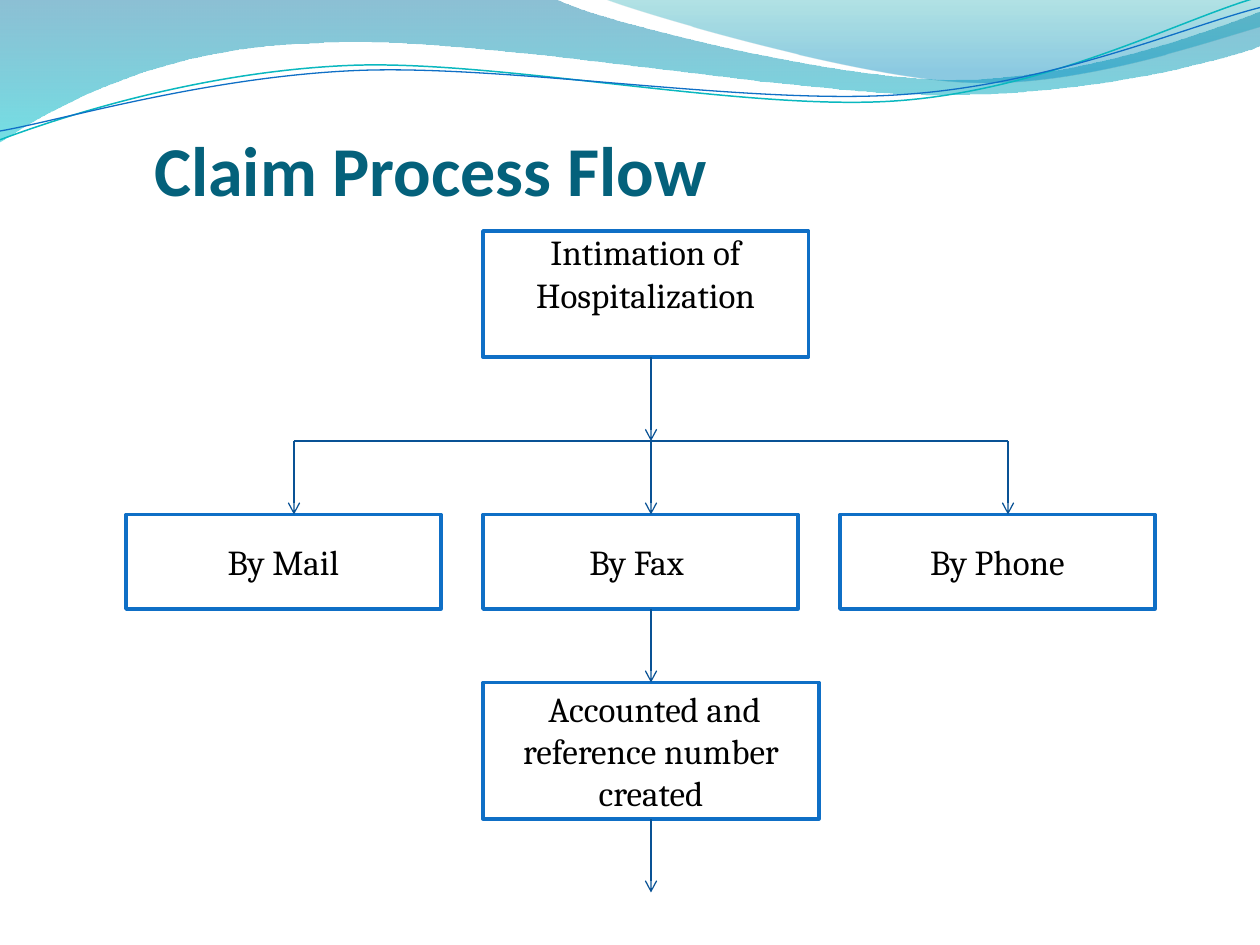
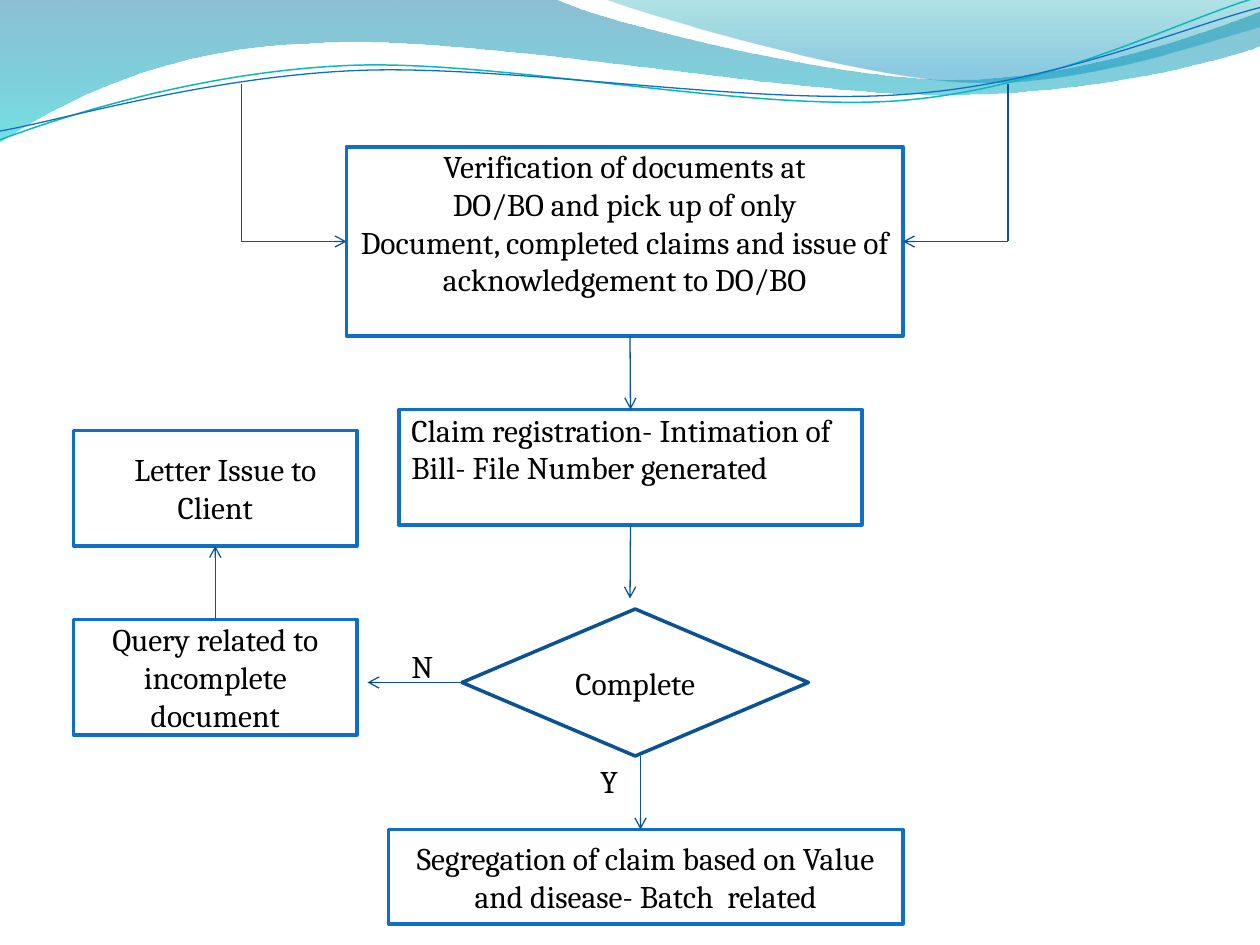
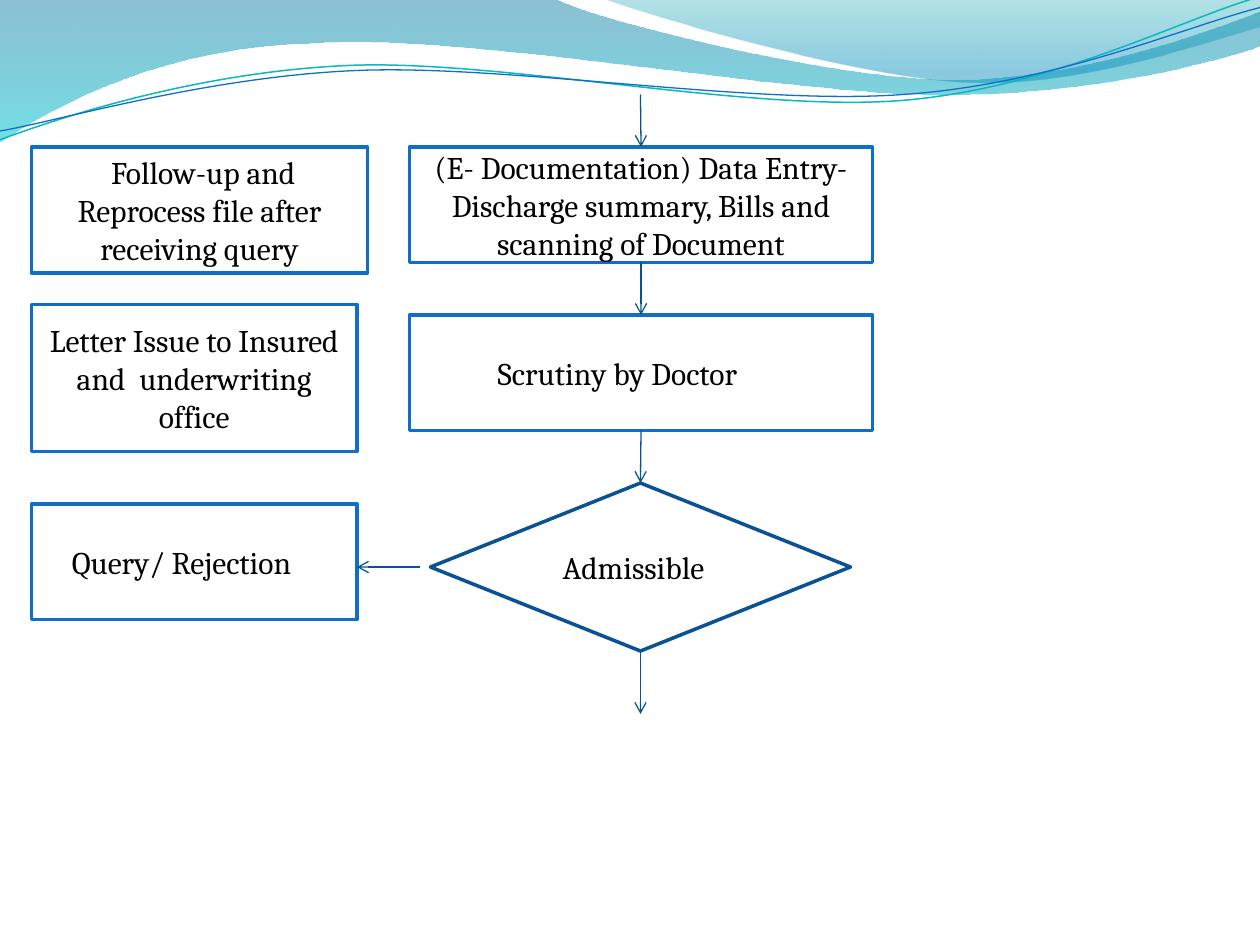
"""Build a three-slide claim process flowchart under a wave banner."""
from lxml.etree import SubElement
from pptx import Presentation
from pptx.dml.color import RGBColor
from pptx.enum.shapes import MSO_CONNECTOR, MSO_SHAPE
from pptx.enum.text import MSO_ANCHOR, PP_ALIGN
from pptx.oxml.ns import qn
from pptx.util import Inches, Pt

WHITE = RGBColor(0xFF, 0xFF, 0xFF)
BLACK = RGBColor(0x00, 0x00, 0x00)
TITLE = RGBColor(0x04, 0x61, 0x7B)
BLUE = RGBColor(0x0F, 0x6F, 0xC6)
NAVY = RGBColor(0x0B, 0x52, 0x92)
ARROW = RGBColor(0x09, 0x52, 0x95)
AQUA = RGBColor(0x0A, 0xB8, 0xBF)
OCEAN = RGBColor(0x00, 0x74, 0xA1)
TURQUOISE = RGBColor(0x00, 0xC6, 0xCF)
TEAL = RGBColor(0x00, 0xA1, 0xA9)
AZURE = RGBColor(0x00, 0x8B, 0xBF)

COLUMNS, ROWS = 120, 90
CELL = Inches(10) // COLUMNS
WIDE = 44.1
RECT, DECISION = MSO_SHAPE.RECTANGLE, MSO_SHAPE.FLOWCHART_DECISION
TOP, LEFT, BOTTOM, RIGHT = range(4)

deck = Presentation()
deck.slide_width, deck.slide_height = COLUMNS * CELL, ROWS * CELL
pages = [deck.slides.add_slide(deck.slide_layouts[6]) for _ in range(3)]
intake, checking, scrutiny = pages


def add_text(page, text, left, top, width, height, kind=RECT, line=BLUE, size=18,
             font="Cambria", color=BLACK, bold=False, align=PP_ALIGN.CENTER,
             anchor=MSO_ANCHOR.MIDDLE, insets=(0.1, 0.05, 0.1, 0.05), indent=0):
    """Add text in a shape, or in a text box if kind is None, in grid cells."""
    frame = [round(cells * CELL) for cells in (left, top, width, height)]
    if kind is None:
        box = page.shapes.add_textbox(*frame)
    else:
        box = page.shapes.add_shape(kind, *frame)
        box.shadow.inherit = False
        box.fill.solid()
        box.fill.fore_color.rgb = WHITE
        box.line.color.rgb = line
        box.line.width = Pt(2)
    body = box.text_frame
    body.word_wrap = True
    body.vertical_anchor = anchor
    body.margin_left, body.margin_top, body.margin_right, body.margin_bottom = map(Inches, insets)
    body.text = text
    for para in body.paragraphs:
        para.alignment = align
        for span in para.runs:
            span.font.name, span.font.size, span.font.bold = font, Pt(size), bold
            span.font.color.rgb = color
    if indent:
        first = next(box.element.iter(qn("a:pPr")))
        first.set("indent", str(Inches(indent)))
    return box


def add_link(page, start, end, begin_at=None, end_at=None, head=True):
    """Join two grid points, gluing ends to (box, side) pairs where given."""
    link = page.shapes.add_connector(
        MSO_CONNECTOR.STRAIGHT, *(round(cells * CELL) for cells in (*start, *end)))
    if begin_at:
        link.begin_connect(*begin_at)
    if end_at:
        link.end_connect(*end_at)
    link.line.color.rgb = ARROW
    link.line.width = Pt(0.75)
    properties = link.element.spPr
    if head:
        SubElement(properties.find(qn("a:ln")), qn("a:tailEnd"), type="arrow")
    SubElement(properties, qn("a:effectLst"))


# Two coordinates make a straight segment, six make a cubic curve.
waves = [
    ([(0, 0), (4.4, -0.01), (4.76, 0.17, 6.64, 0.63, 7.58, 0.63),
      (8.53, 0.63, 9.58, 0.26, 10, 0.09), (10.01, 0.36),
      (9.83, 0.44, 8.7, 0.76, 7.46, 0.75), (6.22, 0.75, 3.82, 0.28, 2.57, 0.34),
      (1.29, 0.36, 0.46, 0.83, -0.01, 1.13)],
     [(0, OCEAN, 45), (1, TURQUOISE, 55)], None),
    ([(4.79, -0.01), (5.09, 0.11, 6.82, 0.62, 7.69, 0.65),
      (8.56, 0.69, 9.61, 0.32, 10, 0.21), (10, 0)],
     [(0, TEAL, 30), (0.8, AZURE, 45)], None),
    ([(0, 1.11), (0.48, 0.93, 1.58, 0.57, 2.77, 0.52),
      (3.95, 0.47, 5.93, 0.89, 7.13, 0.8), (8.33, 0.71, 9.38, 0.15, 9.98, -0.02)],
     None, (AQUA, 0.85)),
    ([(0, 1.04), (0.47, 0.96, 1.64, 0.61, 2.83, 0.56),
      (4.03, 0.51, 5.97, 0.84, 7.17, 0.75), (8.36, 0.67, 9.41, 0.21, 10, 0.06)],
     None, (BLUE, 0.75)),
]
for number, (segments, gradient, stroke) in enumerate(waves):
    points = [(Inches(x), Inches(y)) for segment in segments
              for x, y in zip(segment[::2], segment[1::2])]
    outline = intake.shapes.build_freeform(*points[0])
    outline.add_line_segments(points[1:], close=gradient is not None)
    wave = outline.convert_to_shape()
    route = next(wave.element.iter(qn("a:path")))
    steps = iter(route.findall(qn("a:lnTo")))
    for segment in segments[1:]:
        parts = [next(steps) for _ in segment[::2]]
        if len(parts) == 3:
            curve = SubElement(route, qn("a:cubicBezTo"))
            route.replace(parts[0], curve)
            for part in parts:
                curve.append(part[0])
            for part in parts[1:]:
                route.remove(part)
    wave.shadow.inherit = False
    if gradient:
        wave.line.fill.background()
        wave.fill.gradient()
        wave.fill.gradient_angle = 270
        for stop, (position, color, _) in zip(wave.fill.gradient_stops, gradient):
            stop.position, stop.color.rgb = position, color
        tints = wave.element.spPr.find(qn("a:gradFill")).iter(qn("a:srgbClr"))
        for tint, (_, _, opacity) in zip(list(tints), gradient):
            SubElement(tint, qn("a:alpha"), val=str(opacity * 1000))
    else:
        wave.fill.background()
        wave.line.color.rgb, wave.line.width = stroke[0], Pt(stroke[1])
    wave.element.nvSpPr.cNvPr.set("id", str(100 + number))
    deck.slide_master.element.cSld.spTree.append(wave.element)

add_text(intake, "Claim Process Flow", 4, 9, 65.2, 11.8, kind=None, size=40, font="Calibri",
         color=TITLE, bold=True, align=PP_ALIGN.LEFT, insets=(0.89, 0.24, 0, 0.05))
add_text(intake, "Intimation of Hospitalization", 46, 22, 31, 12, size=20,
         anchor=MSO_ANCHOR.TOP, insets=(0.1, 0, 0.1, 0))
for index, (channel, right) in enumerate((("Mail", 0.1), ("Fax", 0.16), ("Phone", 0.1))):
    add_text(intake, f"By {channel}", 12 + 34 * index, 49, 30, 9, size=20,
             insets=(0.1, 0.05, right, 0.05))
account = add_text(intake, "Accounted and reference number created", 46, 65, 32, 13, size=20,
                   indent=0.06)
add_link(intake, (62, 34), (62, 42))
add_link(intake, (28, 42), (96, 42), head=False)
for column in (28, 62, 96):
    add_link(intake, (column, 42), (column, 49))
add_link(intake, (62, 58), (62, 65), end_at=(account, TOP))
add_link(intake, (62, 78), (62, 85), begin_at=(account, BOTTOM))

verification = add_text(
    checking, "Verification of documents at\nDO/BO and pick up of only\n"
    "Document, completed claims and issue of acknowledgement to DO/BO",
    33, 14, 53, 18, anchor=MSO_ANCHOR.TOP, insets=(0.1, 0, 0.1, 0))
registration = add_text(
    checking, "Claim registration- Intimation of Bill- File Number generated",
    38, 39, WIDE, 11, align=PP_ALIGN.LEFT, anchor=MSO_ANCHOR.TOP, insets=(0.1, 0.01, 0.1, 0))
complete = add_text(checking, "Complete", 44, 58, 33, 14, kind=DECISION, line=NAVY)
letter = add_text(checking, "Letter Issue to Client", 7, 41, 27, 11, indent=0.16)
query = add_text(checking, "Query related to incomplete\ndocument", 7, 59, 27, 11)
add_text(checking, "Segregation of claim based on Value and disease- Batch  related", 37, 79, 49, 9)
for answer, left, top in (("N", 38, 61), ("Y", 56, 72)):
    add_text(checking, answer, left, top, 10, 5, kind=None, align=PP_ALIGN.LEFT,
             anchor=MSO_ANCHOR.TOP)
for column, edge, side in ((23, 33, LEFT), (96, 86, RIGHT)):
    add_link(checking, (column, 8), (column, 23), head=False)
    add_link(checking, (column, 23), (edge, 23), end_at=(verification, side))
add_link(checking, (60, 32), (60, 39), end_at=(registration, TOP))
add_link(checking, (60, 50), (60, 57), begin_at=(registration, BOTTOM))
add_link(checking, (61, 72), (61, 79))
add_link(checking, (44, 65), (35, 65), begin_at=(complete, LEFT))
add_link(checking, (20.5, 59), (20.5, 52), begin_at=(query, TOP), end_at=(letter, BOTTOM))

entry = add_text(
    scrutiny, "(E- Documentation) Data Entry- Discharge summary, Bills and scanning of Document",
    39, 14, WIDE, 11)
doctor = add_text(scrutiny, "Scrutiny by Doctor", 39, 30, WIDE, 11, align=PP_ALIGN.LEFT,
                  insets=(0.7, 0.05, 0.1, 0.05))
admissible = add_text(scrutiny, "Admissible", 41, 46, 40, 16, kind=DECISION, line=NAVY,
                      insets=(0.1, 0.05, 0.21, 0.05))
add_text(scrutiny, "Follow-up and\nReprocess file after\nreceiving query", 3, 14, 32, 12,
         indent=0.06)
add_text(scrutiny, "Letter Issue to Insured and  underwriting office", 3, 29, 31, 14)
add_text(scrutiny, "Query/ Rejection", 3, 48, 31, 11, align=PP_ALIGN.LEFT,
         insets=(0.32, 0.05, 0.1, 0.05))
add_link(scrutiny, (61, 9), (61, 14), end_at=(entry, TOP))
add_link(scrutiny, (61, 25), (61, 30), begin_at=(entry, BOTTOM), end_at=(doctor, TOP))
add_link(scrutiny, (61, 41), (61, 46), begin_at=(doctor, BOTTOM), end_at=(admissible, TOP))
add_link(scrutiny, (61, 62), (61, 68), begin_at=(admissible, BOTTOM))
add_link(scrutiny, (40, 54), (34, 54))

deck.save("out.pptx")
